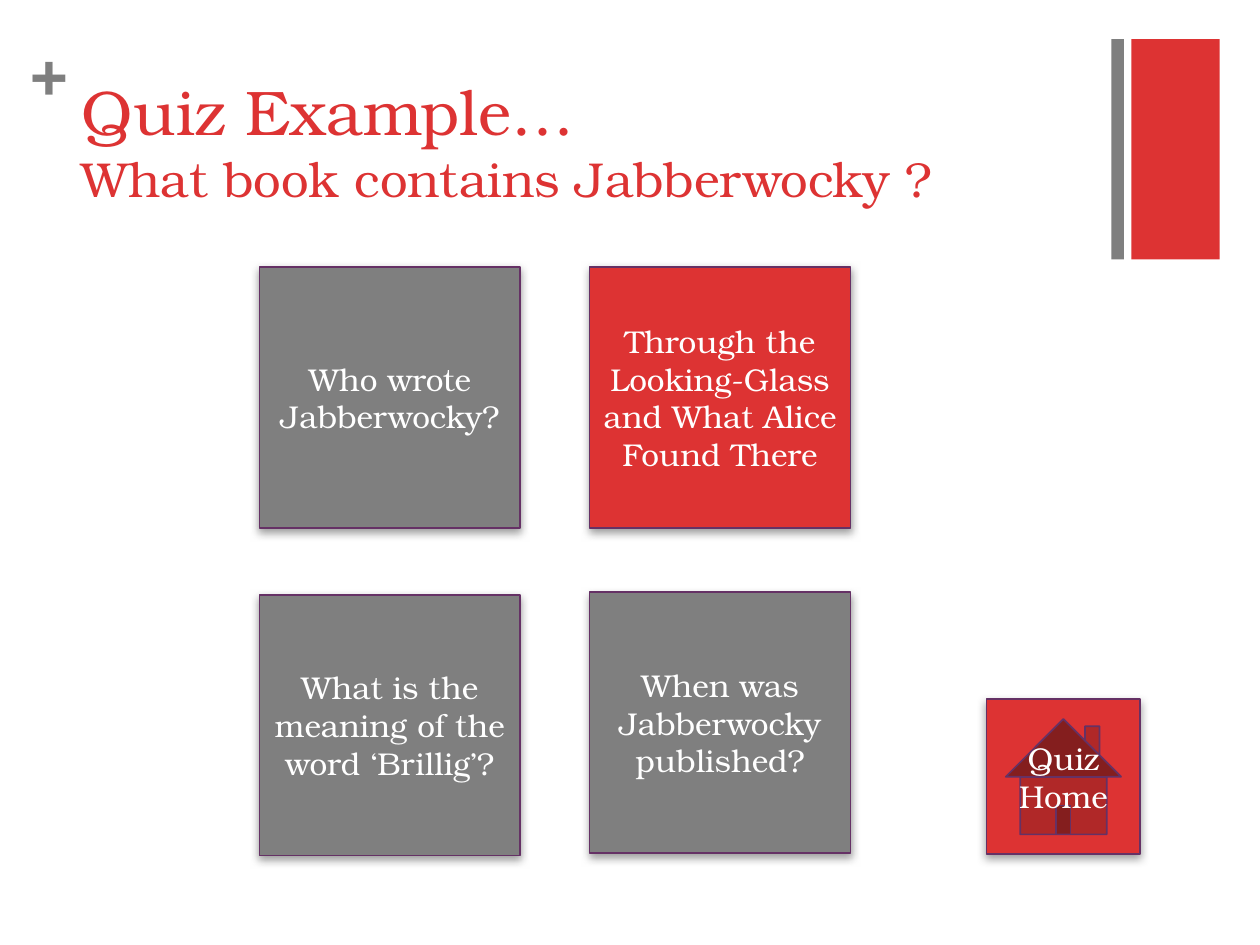
from dataclasses import dataclass

from lxml import etree
from pptx import Presentation
from pptx.dml.color import RGBColor
from pptx.enum import shapes, text
from pptx.oxml import ns
from pptx.util import Inches, Pt


@dataclass(frozen=True)
class Theme:
    font: str = "TeX Gyre Bonum"
    red: RGBColor = RGBColor(0xDD, 0x33, 0x33)
    gray: RGBColor = RGBColor(0x7F, 0x7F, 0x7F)
    outline: RGBColor = RGBColor(0x65, 0x31, 0x65)
    white: RGBColor = RGBColor(0xFF, 0xFF, 0xFF)
    shadow: str = "808080"
    title: int = 36
    question: int = 28
    body: int = 18


theme = Theme()


def style_run(run, size, color, bold=False):
    run.font.name = theme.font
    run.font.size = Pt(size)
    run.font.color.rgb = color
    run.font.bold = bold


def add_button(kind, left, top, width, height, fill, lines):
    button = slide.shapes.add_shape(
        kind, Inches(left), Inches(top), Inches(width), Inches(height))
    button.fill.solid()
    button.fill.fore_color.rgb = fill
    button.line.color.rgb = theme.outline
    button.line.width = Pt(1)

    # Soft shadow straight below the button
    button.shadow.inherit = False
    effects = button._element.spPr.find(ns.qn("a:effectLst"))
    shadow = etree.SubElement(
        effects, ns.qn("a:outerShdw"), blurRad=str(Pt(5)), dist=str(Pt(2)),
        dir="5400000", rotWithShape="0")
    tint = etree.SubElement(shadow, ns.qn("a:srgbClr"), val=theme.shadow)
    etree.SubElement(tint, ns.qn("a:alpha"), val="75000")

    frame = button.text_frame
    frame.word_wrap = True
    frame.vertical_anchor = text.MSO_ANCHOR.MIDDLE
    frame.text = lines
    for paragraph in frame.paragraphs:
        paragraph.alignment = text.PP_ALIGN.CENTER
        style_run(paragraph.runs[0], theme.body, theme.white)


prs = Presentation()
prs.slide_width, prs.slide_height = Inches(10), Inches(7.5)
slide = prs.slides.add_slide(prs.slide_layouts[6])

# Corner bars
for left, width, color in [(8.98, 0.7, theme.red), (8.82, 0.1, theme.gray)]:
    bar = slide.shapes.add_shape(
        shapes.MSO_SHAPE.RECTANGLE,
        Inches(left), Inches(0.31), Inches(width), Inches(1.75))
    bar.shadow.inherit = False
    bar.fill.solid()
    bar.fill.fore_color.rgb = color
    bar.line.fill.background()

# Plus sign
plus = slide.shapes.add_textbox(
    Inches(0.24), Inches(0.25), Inches(0.29), Inches(0.61)).text_frame
plus.margin_left = plus.margin_right = plus.margin_top = plus.margin_bottom = 0
plus.text = "+"
style_run(plus.paragraphs[0].runs[0], theme.title, theme.gray, bold=True)

# Title and question, one paragraph with a line break
heading = slide.shapes.add_textbox(
    Inches(0.55), Inches(0.53), Inches(8.26), Inches(1.22)).text_frame
heading.word_wrap = True
heading.paragraphs[0].text = "Quiz Example…\vWhat book contains Jabberwocky ?"
for run, size in zip(heading.paragraphs[0].runs, (theme.title, theme.question)):
    style_run(run, size, theme.red)

# Quiz buttons
left_column, right_column = 2.06, 4.68
button_size = 2.07
quiz_buttons = [
    (right_column, 2.12, theme.red,
     "Through the Looking-Glass and What Alice Found There"),
    (left_column, 2.12, theme.gray, "Who wrote Jabberwocky?"),
    (left_column, 4.72, theme.gray, "What is the meaning of the word ‘Brillig’?"),
    (right_column, 4.7, theme.gray, "When was Jabberwocky published?"),
]
for left, top, fill, label in quiz_buttons:
    add_button(shapes.MSO_SHAPE.ACTION_BUTTON_CUSTOM,
               left, top, button_size, button_size, fill, label)

# Home button
add_button(shapes.MSO_SHAPE.ACTION_BUTTON_HOME,
           7.83, 5.55, 1.22, 1.23, theme.red, "Quiz\nHome")

prs.save("out.pptx")
